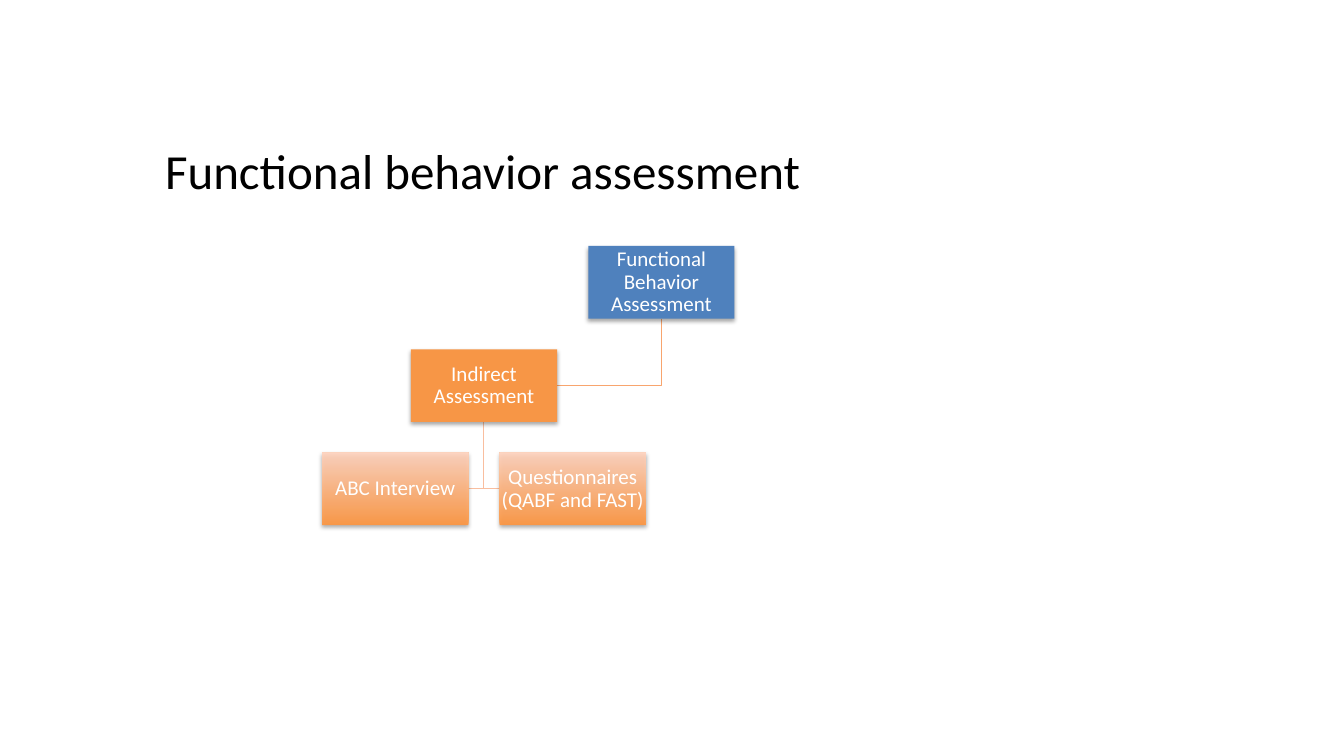
from lxml.etree import SubElement
from pptx import Presentation
from pptx.dml.color import RGBColor
from pptx.enum.shapes import MSO_SHAPE
from pptx.enum.text import MSO_ANCHOR, PP_ALIGN
from pptx.oxml.ns import qn
from pptx.util import Inches, Pt

COLORS = {
    "title": "000000",
    "text": "FFFFFF",
    "root": "4F81BD",
    "branch": "F79646",
    "leaf_bottom": "FF953E",
    "leaf_top": "FFD2BD",
    "branch_line": "F8A56E",
    "leaf_line": "F9BE9F",
    "shadow": "000000",
}
BOX_WIDTH, BOX_HEIGHT = 1.45, 0.72
ROOT_CENTER, ROOT_TOP = 6.56, 2.44
HALF_COLUMN, ROW_PITCH = 0.88, 1.025

# label, half columns from the root, row, fill, parent, line to parent
NODES = [
    ("Functional Behavior Assessment", 0, 0, "root", None, None),
    ("Indirect Assessment", -2, 1, "branch", 0, "branch_line"),
    ("ABC Interview", -3, 2, "leaf", 1, "leaf_line"),
    ("Questionnaires (QABF and FAST)", -1, 2, "leaf", 1, "leaf_line"),
]


def rgb(name):
    return RGBColor.from_string(COLORS[name])


def apply_format(target, values):
    for attribute, value in values.items():
        setattr(target, attribute, value)


def write_text(shape, text, frame_format, size, color):
    frame = shape.text_frame
    frame.text = text
    apply_format(frame, {"word_wrap": True, **frame_format})
    paragraph = frame.paragraphs[0]
    paragraph.alignment = PP_ALIGN.CENTER
    font = paragraph.runs[0].font
    apply_format(font, {"name": "Calibri", "size": Pt(size), "bold": False})
    font.color.rgb = rgb(color)
    return paragraph


def add_shadow(shape):
    shape.shadow.inherit = False
    effects = shape._element.spPr.find(qn("a:effectLst"))
    shadow = SubElement(effects, qn("a:outerShdw"), blurRad=str(Pt(3.1)),
                        dist=str(Pt(1.8)), dir="5400000", rotWithShape="0")
    color = SubElement(shadow, qn("a:srgbClr"), val=COLORS["shadow"])
    SubElement(color, qn("a:alpha"), val="35000")


def fill_leaf(shape):
    """Vertical gradient, orange at the bottom, slightly transparent."""
    shape.fill.gradient()
    shape.fill.gradient_angle = 90
    for stop, name in zip(shape.fill.gradient_stops, ("leaf_bottom", "leaf_top")):
        stop.color.rgb = rgb(name)
    for color in shape._element.spPr.find(qn("a:gradFill")).iter(qn("a:srgbClr")):
        SubElement(color, qn("a:alpha"), val="90000")


def node_position(node):
    """Horizontal centre and top of a node, in inches."""
    return ROOT_CENTER + node[1] * HALF_COLUMN, ROOT_TOP + node[2] * ROW_PITCH


def add_node(slide, node):
    center, top = node_position(node)
    label, fill = node[0], node[3]
    box = slide.shapes.add_shape(
        MSO_SHAPE.RECTANGLE, Inches(center - BOX_WIDTH / 2), Inches(top),
        Inches(BOX_WIDTH), Inches(BOX_HEIGHT))
    if fill == "leaf":
        fill_leaf(box)
    else:
        box.fill.solid()
        box.fill.fore_color.rgb = rgb(fill)
    box.line.fill.background()
    add_shadow(box)
    margins = {f"margin_{side}": Inches(0.01)
               for side in ("left", "top", "right", "bottom")}
    paragraph = write_text(
        box, label, {"vertical_anchor": MSO_ANCHOR.MIDDLE, **margins}, 15, "text")
    paragraph.line_spacing = 0.9


def add_branch(slide, parent, child, color):
    """Elbow from the bottom of the parent to the near side of the child."""
    parent_center, parent_top = node_position(parent)
    child_center, child_top = node_position(child)
    toward_parent = 1 if child_center < parent_center else -1
    side = child_center + toward_parent * BOX_WIDTH / 2
    middle = child_top + BOX_HEIGHT / 2
    builder = slide.shapes.build_freeform(
        Inches(parent_center), Inches(parent_top + BOX_HEIGHT))
    builder.add_line_segments(
        [(Inches(parent_center), Inches(middle)), (Inches(side), Inches(middle))],
        close=False)
    elbow = builder.convert_to_shape()
    elbow.fill.background()
    elbow.line.color.rgb = rgb(color)
    elbow.line.width = Pt(0.75)
    elbow.shadow.inherit = False


def main():
    deck = Presentation()
    apply_format(deck, {"slide_width": Inches(13.33), "slide_height": Inches(7.5)})
    slide = deck.slides.add_slide(deck.slide_layouts[5])

    title = slide.shapes.title
    apply_format(title, {"left": Inches(-0.96), "top": Inches(1.34),
                         "width": Inches(11.5), "height": Inches(1.45)})
    write_text(title, "Functional behavior assessment",
               {"vertical_anchor": MSO_ANCHOR.TOP}, 35, "title")

    for node in NODES:
        if node[4] is not None:
            add_branch(slide, NODES[node[4]], node, node[5])
    for node in NODES:
        add_node(slide, node)

    deck.save("out.pptx")


if __name__ == "__main__":
    main()
